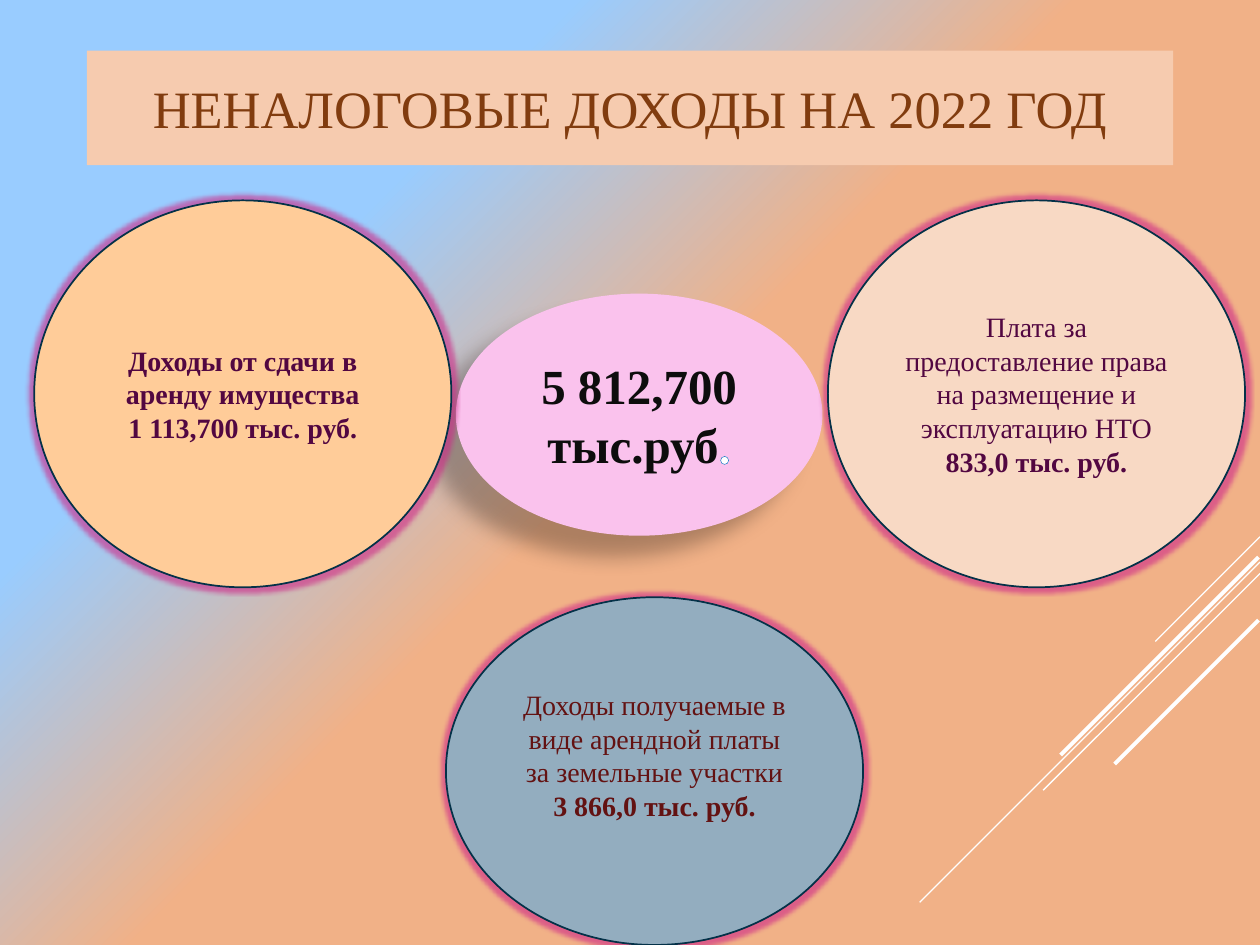
"""Build the slide on non-tax revenue for 2022."""
from lxml import etree
from pptx import Presentation, util as u
from pptx.dml.color import RGBColor
from pptx.enum import shapes, text
from pptx.oxml.ns import qn

COLORS = {
    "sky": "99CCFF", "peach": "F1B187", "white": "FFFFFF", "black": "000000",
    "banner": "F6CBAF", "heading": "813C0F", "total": "FAC2ED", "total_text": "0D0D0D",
    "rent": "FFCC99", "kiosk": "F8D9C4", "plum": "520741", "land": "93ADBF",
    "maroon": "631212", "border": "043148", "glow": "CE2887", "outline": "0070C0",
}
FONT = "Times New Roman"


def add_color(parent, name, alpha=100):
    color = etree.SubElement(parent, qn("a:srgbClr"), val=COLORS[name])
    etree.SubElement(color, qn("a:alpha"), val=str(alpha * 1000))


def format_text(frame, size, color, bold_from=0):
    frame.word_wrap = True
    frame.vertical_anchor = text.MSO_ANCHOR.MIDDLE
    for index, paragraph in enumerate(frame.paragraphs):
        paragraph.alignment = text.PP_ALIGN.CENTER
        for run in paragraph.runs:
            run.font.name = FONT
            run.font.size = u.Pt(size)
            run.font.bold = index >= bold_from
            run.font.color.rgb = RGBColor.from_string(COLORS[color])


prs = Presentation()
prs.slide_width, prs.slide_height = u.Cm(25.4), u.Cm(19.05)
slide = prs.slides.add_slide(prs.slide_layouts[5])

backdrop = slide.background.fill
backdrop.gradient()
backdrop.gradient_angle = 315
for stop, (position, name) in zip(backdrop.gradient_stops, [(0.26, "sky"), (0.49, "peach")]):
    stop.position = position
    stop.color.rgb = RGBColor.from_string(COLORS[name])

for right, top, reach, weight in [
    (25.4, 10.82, 2.11, 0.75),
    (25.4, 11.33, 6.86, 0.75),
    (25.4, 11.56, 4.37, 0.75),
    (25.37, 11.23, 3.99, 2.25),
    (25.37, 12.5, 2.9, 2.25),
]:
    stripe = slide.shapes.add_connector(
        shapes.MSO_CONNECTOR.STRAIGHT,
        u.Cm(right), u.Cm(top), u.Cm(right - reach), u.Cm(top + reach))
    stripe.line.color.rgb = RGBColor.from_string(COLORS["white"])
    stripe.line.width = u.Pt(weight)
    etree.SubElement(stripe._element.spPr, qn("a:effectLst"))

heading = slide.shapes.title
heading.left, heading.top, heading.width, heading.height = map(u.Cm, (1.75, 1.02, 21.9, 2.31))
heading.fill.solid()
heading.fill.fore_color.rgb = RGBColor.from_string(COLORS["banner"])
heading.text_frame.text = "НЕНАЛОГОВЫЕ ДОХОДЫ НА 2022 ГОД"
format_text(heading.text_frame, 30, "heading", bold_from=1)

total = slide.shapes.add_shape(
    shapes.MSO_SHAPE.OVAL, u.Cm(9.19), u.Cm(5.92), u.Cm(7.39), u.Cm(4.88))
total.fill.solid()
total.fill.fore_color.rgb = RGBColor.from_string(COLORS["total"])
total.line.fill.background()
total.shadow.inherit = False
cast = etree.SubElement(
    total._element.spPr.find(qn("a:effectLst")), qn("a:outerShdw"),
    blurRad=str(u.Pt(11.8)), dist=str(u.Pt(19.7)), dir=str(141 * 60000), rotWithShape="0")
add_color(cast, "black", 28)
total.text_frame.text = "5 812,700 тыс.руб"
full_stop = total.text_frame.paragraphs[0].add_run()
full_stop.text = "."
format_text(total.text_frame, 28, "total_text")
full_stop.font.color.rgb = RGBColor.from_string(COLORS["white"])
for run in total.text_frame.paragraphs[0].runs:
    outline = etree.Element(qn("a:ln"), w=str(u.Pt(0.75)))
    add_color(etree.SubElement(outline, qn("a:solidFill")), "outline")
    run.font._element.insert(0, outline)

for left, top, height, fill, color, bold_from, bottom_inset, source, amount in [
    (0.69, 4.04, 7.8, "rent", "plum", 0, 0.13,
     "Доходы от сдачи в аренду имущества", "1 113,700 тыс. руб."),
    (16.69, 4.04, 7.8, "kiosk", "plum", 1, 0.13,
     "Плата за предоставление права на размещение и эксплуатацию НТО", "833,0 тыс. руб."),
    (8.99, 12.04, 7.01, "land", "maroon", 1, 0.78,
     "Доходы получаемые в виде арендной платы за земельные участки", "3 866,0 тыс. руб."),
]:
    income = slide.shapes.add_shape(
        shapes.MSO_SHAPE.OVAL, u.Cm(left), u.Cm(top), u.Cm(8.41), u.Cm(height))
    income.fill.solid()
    income.fill.fore_color.rgb = RGBColor.from_string(COLORS[fill])
    income.line.color.rgb = RGBColor.from_string(COLORS["border"])
    income.line.width = u.Pt(1)
    income.shadow.inherit = False
    halo = etree.SubElement(
        income._element.spPr.find(qn("a:effectLst")), qn("a:glow"), rad=str(u.Pt(5)))
    add_color(halo, "glow", 60)
    income.text_frame.text = f"{source}\n{amount}"
    income.text_frame.margin_bottom = u.Cm(bottom_inset)
    format_text(income.text_frame, 16, color, bold_from)

prs.save("out.pptx")
